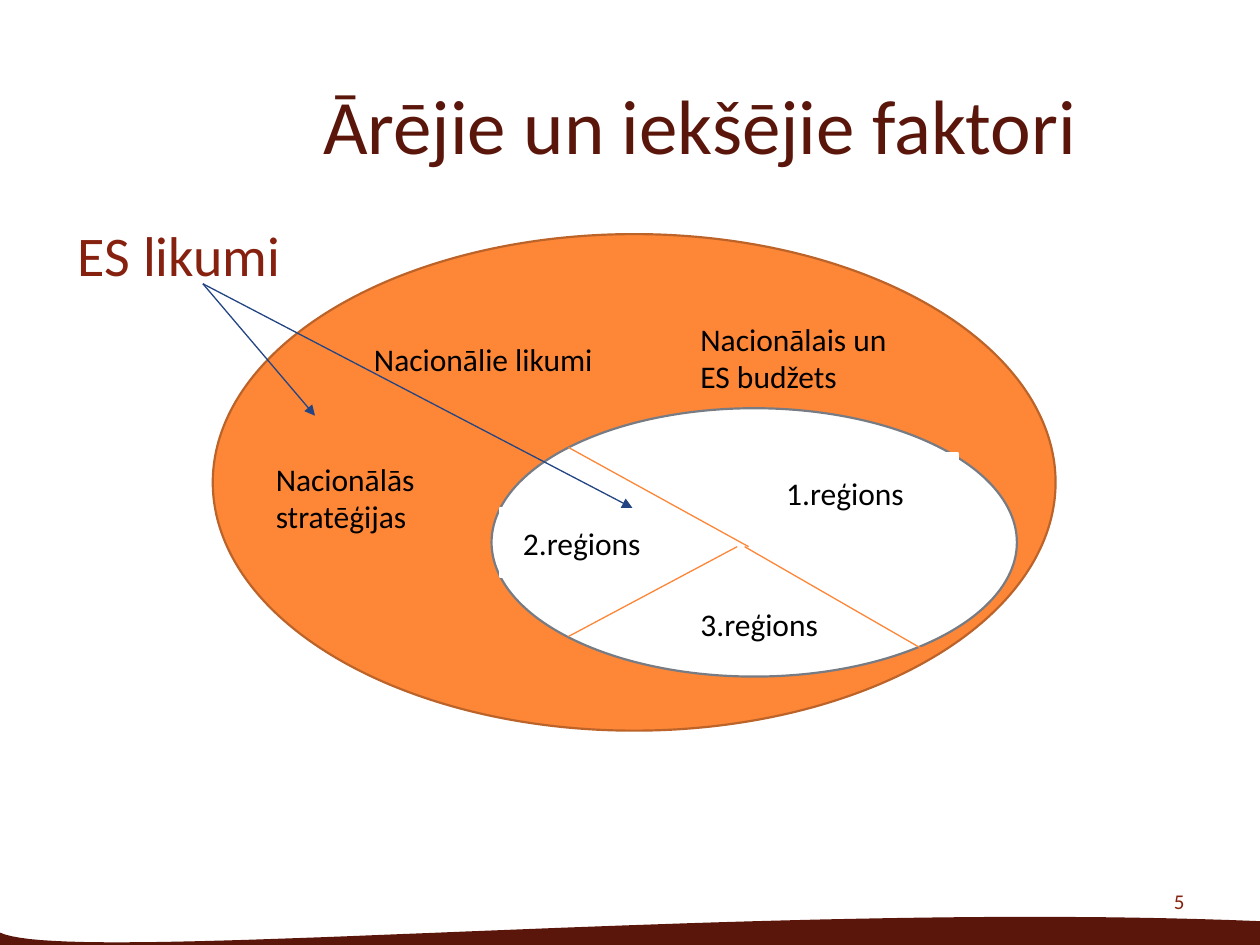
"""Builds the slide on external and internal factors as nested ellipses."""
import pptx
import pptx.util
from pptx.dml.color import RGBColor
from pptx.enum.shapes import MSO_CONNECTOR, MSO_SHAPE
from pptx.enum.text import MSO_ANCHOR, PP_ALIGN
from pptx.oxml.ns import qn
from pptx.util import Cm, Pt
from lxml import etree

MAROON = RGBColor(0x5A, 0x16, 0x0B)
RED = RGBColor(0x86, 0x21, 0x10)
ORANGE = RGBColor(0xFE, 0x86, 0x37)
BROWN = RGBColor(0xBC, 0x63, 0x29)
GREY = RGBColor(0x77, 0x7C, 0x84)
BLUE = RGBColor(0x24, 0x45, 0x83)
WHITE = RGBColor(0xFF, 0xFF, 0xFF)
BLACK = RGBColor(0, 0, 0)

WIDTH, HEIGHT = 25.4, 19.05
WAVE = [(0, 18.8), (1.42, 19.48), (15.14, 18.14), (WIDTH, 18.57)]
WAVE_STEPS = 48

HEADINGS = [
    ("Ārējie un iekšējie faktori", (2.9, 0.91, 22.43, 3.18), 44, MAROON, PP_ALIGN.CENTER, MSO_ANCHOR.MIDDLE),
    ("ES likumi", (1.32, 4.32, 22.86, 12.8), 32, RED, PP_ALIGN.LEFT, MSO_ANCHOR.TOP),
]
ELLIPSES = [
    ((4.29, 4.72, 16.99, 10.01), ORANGE, BROWN),
    ((9.91, 8.23, 10.59, 5.41), WHITE, GREY),
]
REGION_BORDERS = [
    ((11.46, 9.02), (15.09, 11.02)),
    ((14.86, 11.02), (11.46, 12.83)),
    ((15.01, 11.02), (18.64, 13.11)),
]
REGION_PANELS = [
    ("1.reģions", (14.76, 9.14, 4.55, 1.6)),
    ("2.reģions", (10.08, 10.24, 3.3, 1.4)),
]
FACTORS = [
    ("3.reģions", (13.87, 12.07, 3.1, 1.02)),
    ("Nacionālie likumi", (7.29, 6.73, 5.46, 1.02)),
    ("Nacionālās stratēģijas", (5.31, 9.14, 4.6, 1.8)),
    ("Nacionālais un ES budžets", (13.87, 6.32, 4.78, 1.8)),
]
EU_LAWS = (4.09, 5.72)
EU_LAW_TARGETS = [(12.75, 10.24), (6.35, 8.38)]
PAGE_NUMBER = ("5", (18.21, 17.65, 5.92, 1.02), 12, RED, PP_ALIGN.RIGHT, MSO_ANCHOR.MIDDLE)


def write(shape, text, size, colour, align, anchor):
    frame = shape.text_frame
    frame.word_wrap = True
    frame.vertical_anchor = anchor
    frame.text = text
    paragraph = frame.paragraphs[0]
    paragraph.alignment = align
    font = paragraph.runs[0].font
    font.name, font.size = "Calibri", Pt(size)
    font.color.rgb = colour


def add_text(slide, text, box, size=18, colour=BLACK, align=PP_ALIGN.LEFT, anchor=MSO_ANCHOR.TOP):
    write(slide.shapes.add_textbox(*map(Cm, box)), text, size, colour, align, anchor)


def add_filled(slide, preset, box, fill, outline):
    shape = slide.shapes.add_shape(preset, *map(Cm, box))
    shape.shadow.inherit = False
    shape.fill.solid()
    shape.fill.fore_color.rgb = fill
    shape.line.color.rgb = outline
    shape.line.width = Pt(1.25)
    return shape


def add_line(slide, start, end, colour, arrow=False):
    line = slide.shapes.add_connector(MSO_CONNECTOR.STRAIGHT, *map(Cm, start + end))
    line.line.color.rgb = colour
    line.line.width = Pt(0.75)
    if arrow:
        etree.SubElement(line.line._get_or_add_ln(), qn("a:tailEnd"), type="triangle")
    etree.SubElement(line._element.spPr, qn("a:effectLst"))


def wave_point(t):
    weights = ((1 - t) ** 3, 3 * t * (1 - t) ** 2, 3 * t * t * (1 - t), t ** 3)
    return tuple(Cm(sum(w * p[axis] for w, p in zip(weights, WAVE))) for axis in (0, 1))


def add_wave(slide):
    crest = [wave_point(step / WAVE_STEPS) for step in range(WAVE_STEPS + 1)]
    base = [(Cm(WIDTH), Cm(HEIGHT)), (0, Cm(HEIGHT))]
    builder = slide.shapes.build_freeform(*crest[0])
    builder.add_line_segments(crest[1:] + base, close=True)
    wave = builder.convert_to_shape()
    wave.shadow.inherit = False
    wave.fill.solid()
    wave.fill.fore_color.rgb = MAROON
    wave.line.fill.background()


def main():
    deck = pptx.Presentation()
    deck.slide_width, deck.slide_height = Cm(WIDTH), Cm(HEIGHT)
    slide = deck.slides.add_slide(deck.slide_layouts[6])
    add_wave(slide)
    for heading in HEADINGS:
        add_text(slide, *heading)
    for ellipse in ELLIPSES:
        add_filled(slide, MSO_SHAPE.OVAL, *ellipse)
    for start, end in REGION_BORDERS:
        add_line(slide, start, end, ORANGE)
    for region, box in REGION_PANELS:
        panel = add_filled(slide, MSO_SHAPE.RECTANGLE, box, WHITE, WHITE)
        write(panel, region, 18, BLACK, PP_ALIGN.CENTER, MSO_ANCHOR.MIDDLE)
    for factor in FACTORS:
        add_text(slide, *factor)
    for target in EU_LAW_TARGETS:
        add_line(slide, EU_LAWS, target, BLUE, arrow=True)
    add_text(slide, *PAGE_NUMBER)
    deck.save("out.pptx")


if __name__ == "__main__":
    main()
